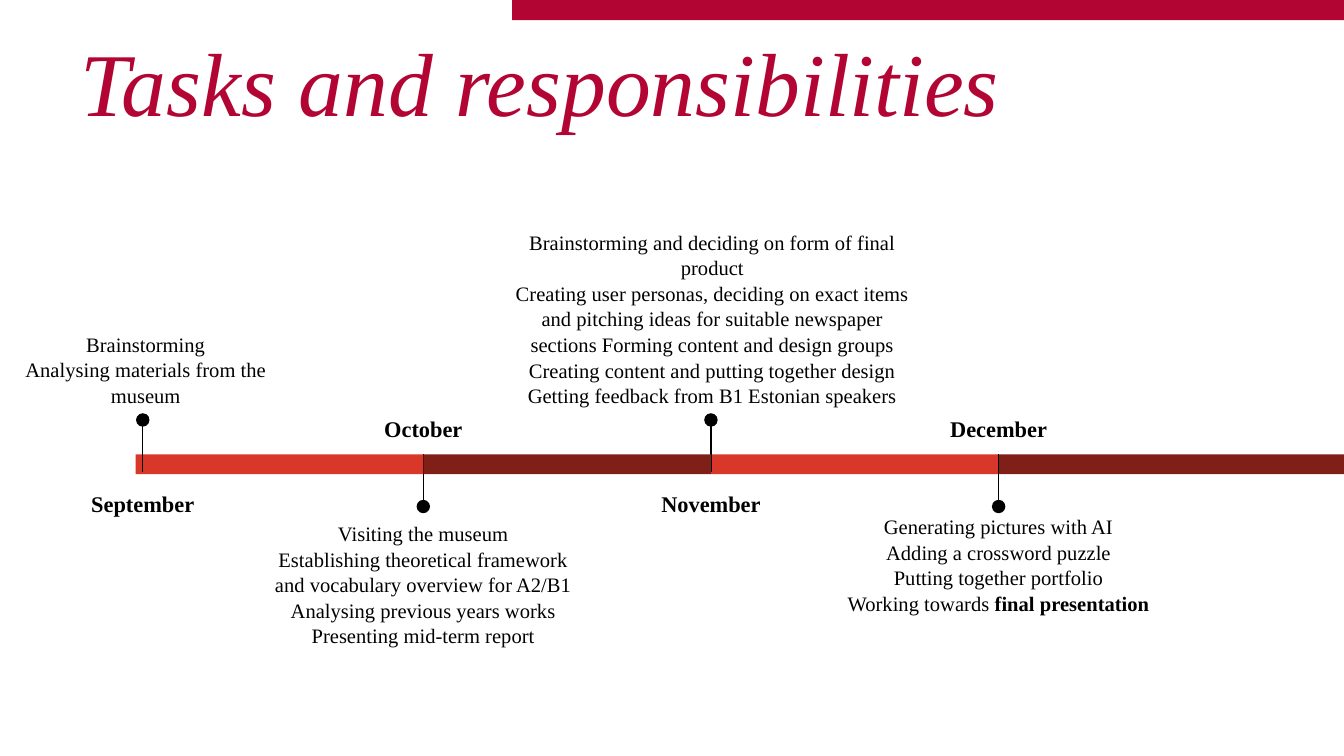
from lxml import etree
from pptx import Presentation
from pptx.dml.color import RGBColor
from pptx.enum import shapes, text
from pptx.oxml.ns import qn
from pptx.util import Pt

COLOURS = {"crimson": "B20533", "red": "D83729", "maroon": "801F17", "black": "000000"}
FONT = "Times New Roman"
BAR_TOP, BAR_HEIGHT = 243.4, 10.6
STEM, DOT = 28, 7.2

STAGES = [
    dict(month="November", bar=(380.9, 154.1), colour="red", stem=380.9, up=True,
         note=(265.7, 115.3, 231.8, 100), lines=[
             "Brainstorming and deciding on form of final product",
             "Creating user personas, deciding on exact items and pitching ideas "
             "for suitable newspaper sections Forming content and design groups",
             "Creating content and putting together design "
             "Getting feedback from B1 Estonian speakers"]),
    dict(month="December", bar=(535, 185), colour="maroon", stem=535, up=False,
         note=(428.4, 267.8, 213.1, 74), lines=[
             "Generating pictures with AI", "Adding a crossword puzzle",
             "Putting together portfolio", "Working towards |final presentation"]),
    dict(month="October", bar=(226.8, 154.1), colour="maroon", stem=226.8, up=False,
         note=(138.2, 271.4, 177.1, 74), lines=[
             "Visiting the museum",
             "Establishing theoretical framework and vocabulary overview for A2/B1",
             "Analysing previous years works", "Presenting mid-term report"]),
    dict(month="September", bar=(72.7, 154.1), colour="red", stem=76.5, up=True,
         note=(0, 170, 156.2, 50), lines=[
             "Brainstorming", "Analysing materials from the museum"]),
]


class Timeline:
    """Holds the text style and the page being drawn."""

    def __init__(self, page):
        self.page = page

    def colour(self, name):
        return RGBColor.from_string(COLOURS[name])

    def shape(self, kind, bounds, fill):
        item = self.page.shapes.add_shape(kind, *map(Pt, bounds))
        item.shadow.inherit = False
        item.fill.solid()
        item.fill.fore_color.rgb = self.colour(fill)
        item.line.fill.background()

    def bar(self, bounds, fill):
        self.shape(shapes.MSO_SHAPE.RECTANGLE, bounds, fill)

    def pin(self, x, tip, foot):
        stem = self.page.shapes.add_connector(
            shapes.MSO_CONNECTOR.STRAIGHT, Pt(x), Pt(tip), Pt(x), Pt(foot))
        stem.line.color.rgb = self.colour("black")
        stem.line.width = Pt(0.75)
        properties = stem.element.find(qn("p:spPr"))
        etree.SubElement(properties, qn("a:effectLst"))
        self.shape(shapes.MSO_SHAPE.OVAL, (x - DOT / 2, tip - DOT / 2, DOT, DOT), "black")

    def words(self, bounds, lines, size, colour="black", bold=False, italic=False,
              align=text.PP_ALIGN.CENTER, anchor=text.MSO_ANCHOR.TOP, spacing=1.0):
        frame = self.page.shapes.add_textbox(*map(Pt, bounds)).text_frame
        frame.word_wrap = True
        frame.vertical_anchor = anchor
        frame.margin_left = frame.margin_right = Pt(7.2)
        frame.margin_top = frame.margin_bottom = Pt(7.2)
        for index, line in enumerate(lines):
            para = frame.paragraphs[0] if index == 0 else frame.add_paragraph()
            plain, _, strong = line.partition("|")
            para.text = plain
            if strong:
                para.add_run().text = strong
            para.alignment = align
            para.line_spacing = spacing
            for position, span in enumerate(para.runs):
                span.font.name = FONT
                span.font.size = Pt(size)
                span.font.bold = bold or position > 0
                span.font.italic = italic
                span.font.color.rgb = self.colour(colour)

    def title(self, bounds, line):
        self.words(bounds, [line], 48, "crimson", italic=True, spacing=0.75,
                   align=text.PP_ALIGN.LEFT, anchor=text.MSO_ANCHOR.MIDDLE)

    def month(self, x, top, name):
        self.words((x - 41, top, 82, 29.5), [name], 12, bold=True, spacing=1.15)

    def stage(self, month, bar, colour, stem, up, note, lines):
        left, width = bar
        self.month(stem, 253.4 if up else 213.1, month)
        self.words(note, lines, 11, spacing=1.04)
        self.bar((left, BAR_TOP, width, BAR_HEIGHT), colour)
        if up:
            self.pin(stem, 225, 225 + STEM)
        else:
            self.pin(stem, BAR_TOP + STEM, BAR_TOP)


def main():
    deck = Presentation()
    deck.slide_width, deck.slide_height = Pt(720), Pt(405)
    timeline = Timeline(deck.slides.add_slide(deck.slide_layouts[6]))
    timeline.bar((274.4, 0, 445.6, 10.8), "crimson")
    timeline.title((36, 15.8, 647.3, 67), "Tasks and responsibilities")
    for stage in STAGES:
        timeline.stage(**stage)
    deck.save("out.pptx")


if __name__ == "__main__":
    main()
